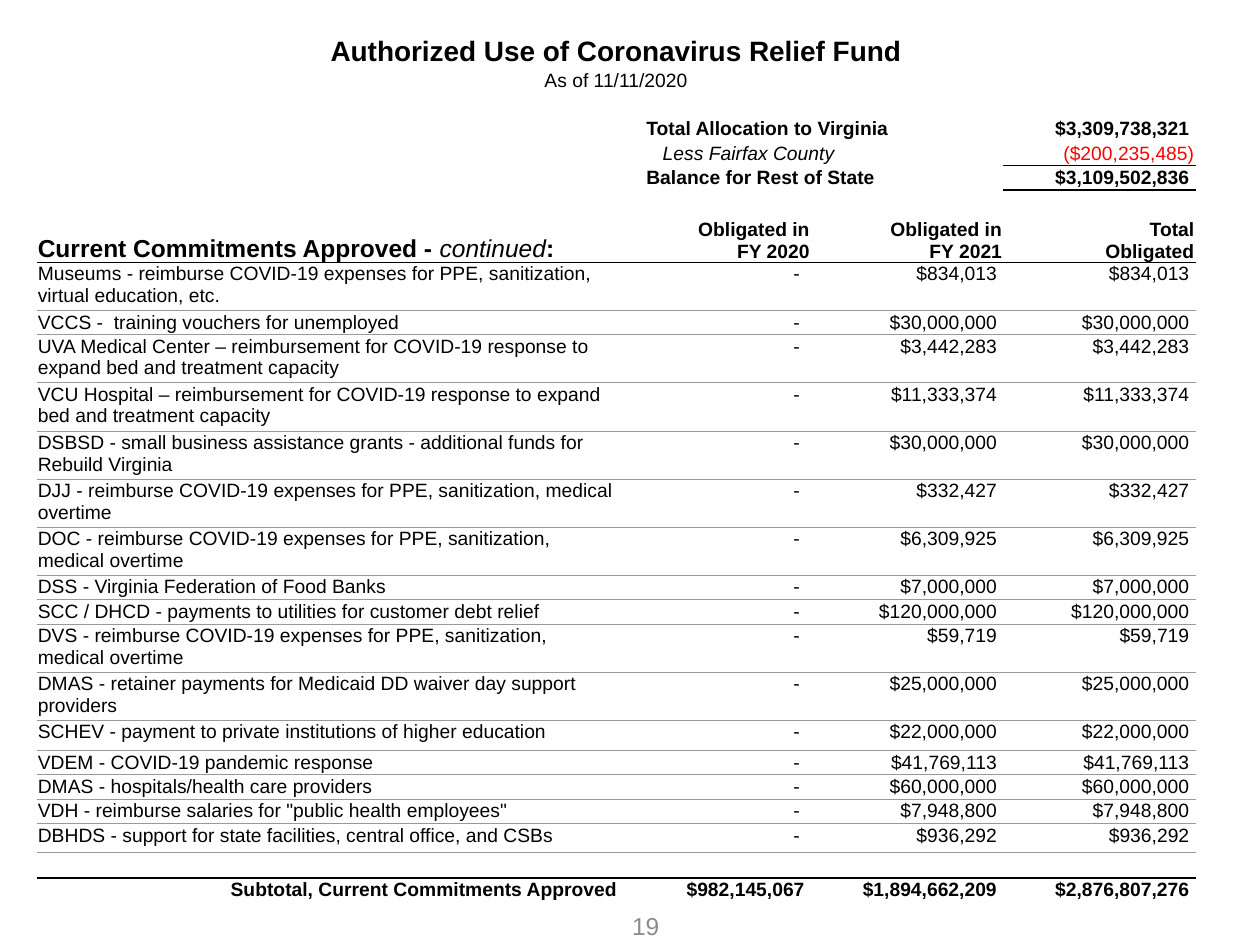
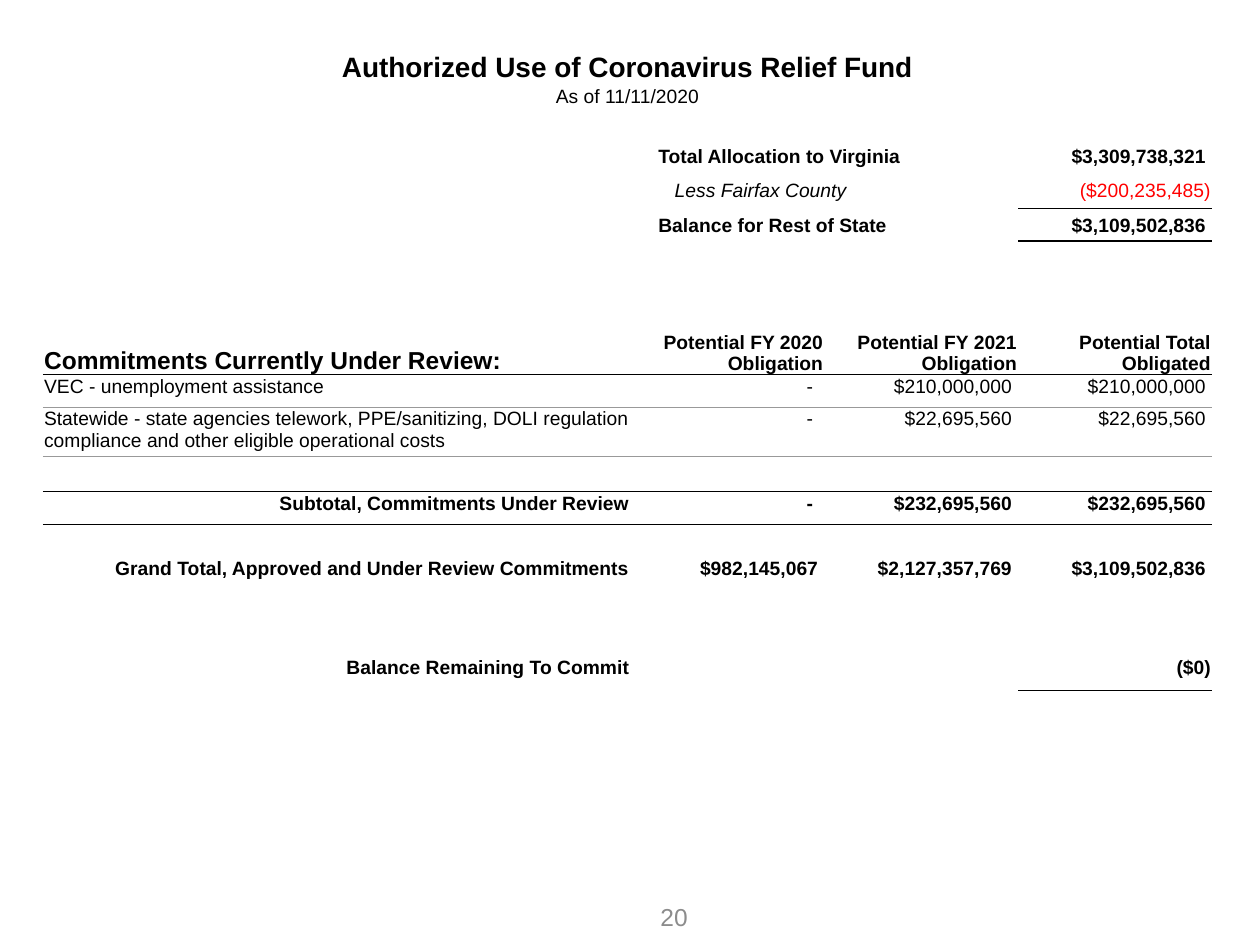
from dataclasses import dataclass

from lxml.etree import SubElement
from pptx import Presentation
from pptx.dml.color import RGBColor
from pptx.enum.text import MSO_ANCHOR, PP_ALIGN
from pptx.oxml.ns import qn
from pptx.util import Inches, Pt

LEFT, CENTER, RIGHT = PP_ALIGN.LEFT, PP_ALIGN.CENTER, PP_ALIGN.RIGHT
TOP, MIDDLE, BOTTOM = MSO_ANCHOR.TOP, MSO_ANCHOR.MIDDLE, MSO_ANCHOR.BOTTOM
PLAIN_TABLE = "{2D5ABB26-0587-4C30-8999-92F81FD0307C}"


@dataclass(frozen=True)
class Theme:
    font: str = "Arial"
    ink: str = "000000"
    negative: str = "FF0000"
    hairline: str = "999999"
    page: str = "8C8C8C"
    title: int = 16
    heading: int = 14
    body: int = 11
    thin: float = 0.5
    thick: float = 1
    inset: float = 0.01


THEME = Theme()


def write(tf, text, size=THEME.body, color=THEME.ink, bold=False, italic=False,
          align=LEFT):
    """Fill a text frame; text is a string or a list of (text, is_continued) parts."""
    parts = [(text, False)] if isinstance(text, str) else text
    p = tf.paragraphs[0]
    for part, continued in parts:
        for i, line in enumerate(part.split("\n")):
            if i:
                p = tf.add_paragraph()
            p.alignment = align
            r = p.add_run()
            r.text = line
            font = r.font
            font.name, font.size = THEME.font, Pt(size)
            font.bold = bold and not continued
            font.italic = italic or continued
            font.color.rgb = RGBColor.from_string(color)


def money(value):
    if value == 0:
        return "-"
    return f"${value:,}" if value > 0 else f"(${-value:,})"


class FundSlide:
    """A slide holding one fund table, filled from the top row down."""

    def __init__(self, prs, page, page_box):
        self.s = prs.slides.add_slide(prs.slide_layouts[6])
        self.row = 0
        tf = self.s.shapes.add_textbox(*map(Inches, page_box)).text_frame
        tf.word_wrap = True
        tf.vertical_anchor = MIDDLE
        write(tf, page, THEME.heading, THEME.page, align=CENTER)

    def add_table(self, box, columns, heights):
        """Place the table; columns and rows are scaled to fill the box."""
        left, top, width, height = box
        frame = self.s.shapes.add_table(len(heights), len(columns), *map(Inches, box))
        self.table = frame.table
        self.table.first_row = self.table.horz_banding = False
        frame._element.find(".//" + qn("a:tableStyleId")).text = PLAIN_TABLE
        for column, share in zip(self.table.columns, columns):
            column.width = Inches(width * share / sum(columns))
        for row, share in zip(self.table.rows, heights):
            row.height = Inches(height * share / sum(heights))
        for cell in self.table.iter_cells():
            cell.margin_left = cell.margin_right = Inches(THEME.inset)
            cell.margin_top, cell.margin_bottom = Inches(THEME.inset), 0
            cell.fill.background()
            end = SubElement(cell.text_frame.paragraphs[0]._p, qn("a:endParaRPr"))
            end.set("sz", str(THEME.body * 100))

    def cell(self, col, text, anchor=TOP, indent=0.0, pad=0.0, **fmt):
        cell = self.table.cell(self.row, col)
        cell.vertical_anchor = anchor
        cell.margin_left = Inches(THEME.inset + indent)
        cell.margin_right = Inches(THEME.inset + pad)
        write(cell.text_frame, text, **fmt)

    def amount(self, col, value, **fmt):
        pad = 0.08 if value == 0 else 0.04 if value > 0 else 0
        self.cell(col, money(value), pad=pad, align=RIGHT, **fmt)

    def merge(self, first, last):
        self.table.cell(self.row, first).merge(self.table.cell(self.row, last))

    def rule(self, cols=range(4), color=THEME.ink, width=THEME.thick):
        """Draw a line below the current row."""
        for row, tag in ((self.row, "a:lnB"), (self.row + 1, "a:lnT")):
            if row == len(self.table.rows):
                continue
            for col in cols:
                tcPr = self.table.cell(row, col)._tc.get_or_add_tcPr()
                ln = tcPr.makeelement(qn(tag), {"w": str(Pt(width))})
                fill = SubElement(ln, qn("a:solidFill"))
                SubElement(fill, qn("a:srgbClr"), val=color)
                tcPr.insert(0 if tag == "a:lnT" else len(tcPr) - 1, ln)

    def skip(self, rows=1):
        self.row += rows

    def titles(self):
        for text, size, bold in (
                ("Authorized Use of Coronavirus Relief Fund", THEME.title, True),
                ("As of 11/11/2020", THEME.body, False)):
            self.merge(0, 3)
            self.cell(0, text, BOTTOM, size=size, bold=bold, align=CENTER)
            self.skip()

    def allocation(self):
        for label, value, deduction in (
                ("Total Allocation to Virginia", 3309738321, False),
                ("Less Fairfax County", -200235485, True),
                ("Balance for Rest of State", 3109502836, False)):
            self.merge(1, 2)
            self.cell(1, label, MIDDLE, indent=0.34 if deduction else 0.21,
                      bold=not deduction, italic=deduction)
            self.amount(3, value, anchor=MIDDLE, bold=not deduction,
                        color=THEME.negative if deduction else THEME.ink)
            if deduction:
                self.rule([3])
            self.skip()

    def header(self, heading, labels):
        self.cell(0, heading, BOTTOM, size=THEME.heading, bold=True)
        for col, label in enumerate(labels, 1):
            self.cell(col, label, BOTTOM, bold=True, align=RIGHT)
        self.rule()
        self.skip()

    def commitments(self, entries):
        """List (description, FY 2021 amount); nothing falls in FY 2020."""
        for description, value in entries:
            self.cell(0, description)
            for col, amount in enumerate((0, value, value), 1):
                self.amount(col, amount)
            self.rule(color=THEME.hairline, width=THEME.thin)
            self.skip()

    def total(self, label, *values):
        self.cell(0, label, bold=True, align=RIGHT)
        for col, value in enumerate(values, 1):
            self.amount(col, value, bold=True)
        self.skip()


APPROVED = [
    ("Museums - reimburse COVID-19 expenses for PPE, sanitization, virtual education, etc.", 834013),
    ("VCCS -  training vouchers for unemployed", 30000000),
    ("UVA Medical Center – reimbursement for COVID-19 response to expand bed and treatment capacity", 3442283),
    ("VCU Hospital – reimbursement for COVID-19 response to expand bed and treatment capacity", 11333374),
    ("DSBSD - small business assistance grants - additional funds for Rebuild Virginia", 30000000),
    ("DJJ - reimburse COVID-19 expenses for PPE, sanitization, medical overtime", 332427),
    ("DOC - reimburse COVID-19 expenses for PPE, sanitization, medical overtime", 6309925),
    ("DSS - Virginia Federation of Food Banks", 7000000),
    ("SCC / DHCD - payments to utilities for customer debt relief", 120000000),
    ("DVS - reimburse COVID-19 expenses for PPE, sanitization, medical overtime", 59719),
    ("DMAS - retainer payments for Medicaid DD waiver day support providers", 25000000),
    ("SCHEV - payment to private institutions of higher education", 22000000),
    ("VDEM - COVID-19 pandemic response", 41769113),
    ("DMAS - hospitals/health care providers", 60000000),
    ('VDH - reimburse salaries for "public health employees"', 7948800),
    ("DBHDS - support for state facilities, central office, and CSBs", 936292),
]
UNDER_REVIEW = [
    ("VEC - unemployment assistance", 210000000),
    ("Statewide - state agencies telework, PPE/sanitizing, DOLI regulation "
     "compliance and other eligible operational costs", 22695560),
]


def approved_slide(prs):
    one, two = 0.19, 0.38
    heights = [0.28, one, one, one, 0.2, one, one, two,
               two, one, *[two] * 5, one, one, two, two, 0.24, one, one, one, 0.23,
               0.2, one]
    s = FundSlide(prs, "19", (4.75, 7.19, 0.75, 0.31))
    s.add_table((0.29, 0.25, 9.2, 6.88), (4.63, 1.53, 1.53, 1.53), heights)
    s.titles()
    s.skip()
    s.allocation()
    s.skip()
    s.header([("Current Commitments Approved - ", False), ("continued", True), (":", False)],
             ["Obligated in\nFY 2020", "Obligated in\nFY 2021", "Total\nObligated"])
    s.commitments(APPROVED)
    s.rule()
    s.skip()
    s.total("Subtotal, Current Commitments Approved", 982145067, 1894662209, 2876807276)


def review_slide(prs):
    one = 0.26
    heights = [0.32, 0.18, one, one, 0.28, one, one, one, 0.54,
               one, 0.39, 0.28, one, one, 0.52, one, 0.28]
    s = FundSlide(prs, "20", (5, 7.13, 0.7, 0.29))
    s.add_table((0.34, 0.34, 9.28, 5.13), (4.67, 1.54, 1.54, 1.54), heights)
    s.titles()
    s.skip()
    s.allocation()
    s.skip(2)
    s.header("Commitments Currently Under Review:",
             ["Potential FY 2020 Obligation", "Potential FY 2021 Obligation",
              "Potential Total Obligated"])
    s.commitments(UNDER_REVIEW)
    s.rule()
    s.skip()
    subtotal = sum(value for _, value in UNDER_REVIEW)
    s.total("Subtotal, Commitments Under Review", 0, subtotal, subtotal)
    s.skip()
    s.total("Grand Total, Approved and Under Review Commitments",
            982145067, 2127357769, 3109502836)
    s.skip()
    s.cell(3, "($0)", bold=True, align=RIGHT)
    s.rule([3])
    s.total("Balance Remaining To Commit")


def main():
    prs = Presentation()
    prs.slide_width, prs.slide_height = Inches(10), Inches(7.5)
    approved_slide(prs)
    review_slide(prs)
    prs.save("out.pptx")


if __name__ == "__main__":
    main()
